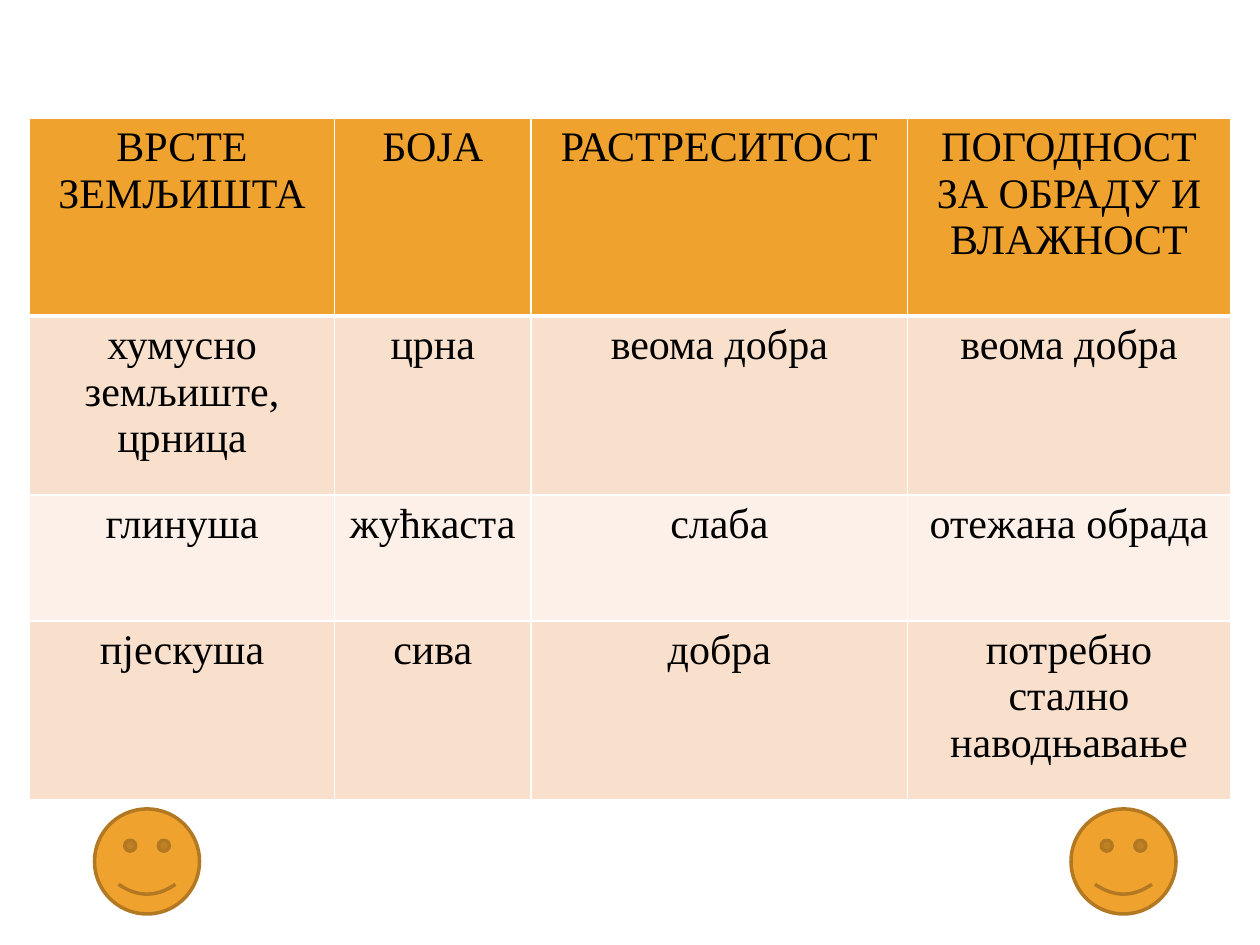
from dataclasses import dataclass

from lxml import etree
from pptx import Presentation
from pptx.dml.color import RGBColor
from pptx.enum import shapes, text
from pptx.oxml import ns
from pptx.util import Inches, Pt

SLIDE_WIDTH, SLIDE_HEIGHT = 10, 7.5


@dataclass(frozen=True)
class Theme:
    font: str = "Times New Roman"
    size: int = 24
    ink: str = "000000"
    accent: str = "F0A22E"
    outline: str = "B27822"
    bands: tuple = ("F9E0CD", "FCF0E8")
    border: str = "FFFFFF"
    thin: int = 1
    thick: int = 3
    shape_line: int = 2


THEME = Theme()

COLUMN_WIDTHS = (2.42, 1.56, 2.99, 2.56)
ROW_HEIGHTS = (1.57, 1.42, 1, 1.42)
SOIL_ROWS = (
    ("ВРСТЕ\nЗЕМЉИШТА", "БОЈА", "РАСТРЕСИТОСТ", "ПОГОДНОСТ ЗА ОБРАДУ И ВЛАЖНОСТ"),
    ("хумусно земљиште, црница", "црна", "веома добра", "веома добра"),
    ("глинуша", "жућкаста", "слаба", "отежана обрада"),
    ("пјескуша", "сива", "добра", "потребно стално наводњавање"),
)


def rgb(value):
    return RGBColor.from_string(value)


def set_borders(cell, top, bottom):
    """Draw the four cell borders; the sides are always thin."""
    properties = cell._tc.get_or_add_tcPr()
    widths = {"lnL": THEME.thin, "lnR": THEME.thin, "lnT": top, "lnB": bottom}
    for tag, width in widths.items():
        line = etree.SubElement(properties, ns.qn(f"a:{tag}"), w=str(Pt(width)))
        fill = etree.SubElement(line, ns.qn("a:solidFill"))
        etree.SubElement(fill, ns.qn("a:srgbClr"), val=THEME.border)


def write_centred(frame, content):
    for index, line in enumerate(content.split("\n")):
        paragraph = frame.add_paragraph() if index else frame.paragraphs[0]
        paragraph.alignment = text.PP_ALIGN.CENTER
        run = paragraph.add_run()
        run.text = line
        run.font.name = THEME.font
        run.font.size = Pt(THEME.size)
        run.font.bold = False
        run.font.color.rgb = rgb(THEME.ink)


def add_soil_table(slide, left, top):
    table = slide.shapes.add_table(
        len(SOIL_ROWS), len(COLUMN_WIDTHS), Inches(left), Inches(top),
        Inches(sum(COLUMN_WIDTHS)), Inches(sum(ROW_HEIGHTS))).table
    for column, width in zip(table.columns, COLUMN_WIDTHS):
        column.width = Inches(width)
    for index, (row, height) in enumerate(zip(table.rows, ROW_HEIGHTS)):
        row.height = Inches(height)
        color = THEME.bands[(index - 1) % 2] if index else THEME.accent
        top_line = THEME.thick if index == 1 else THEME.thin
        bottom_line = THEME.thick if index == 0 else THEME.thin
        for cell, content in zip(row.cells, SOIL_ROWS[index]):
            set_borders(cell, top_line, bottom_line)
            cell.fill.solid()
            cell.fill.fore_color.rgb = rgb(color)
            write_centred(cell.text_frame, content)


def add_smiley(slide, left, top, size):
    shape = slide.shapes.add_shape(
        shapes.MSO_SHAPE.SMILEY_FACE,
        Inches(left), Inches(top), Inches(size), Inches(size))
    shape.shadow.inherit = False
    shape.fill.solid()
    shape.fill.fore_color.rgb = rgb(THEME.accent)
    shape.line.color.rgb = rgb(THEME.outline)
    shape.line.width = Pt(THEME.shape_line)


def main():
    presentation = Presentation()
    presentation.slide_width = Inches(SLIDE_WIDTH)
    presentation.slide_height = Inches(SLIDE_HEIGHT)
    slide = presentation.slides.add_slide(presentation.slide_layouts[6])
    add_soil_table(slide, (SLIDE_WIDTH - sum(COLUMN_WIDTHS)) / 2, SLIDE_HEIGHT / 8)
    for share in (0.85, 0.075):
        add_smiley(slide, SLIDE_WIDTH * share, 6.42, SLIDE_HEIGHT / 9)
    presentation.save("out.pptx")


if __name__ == "__main__":
    main()
